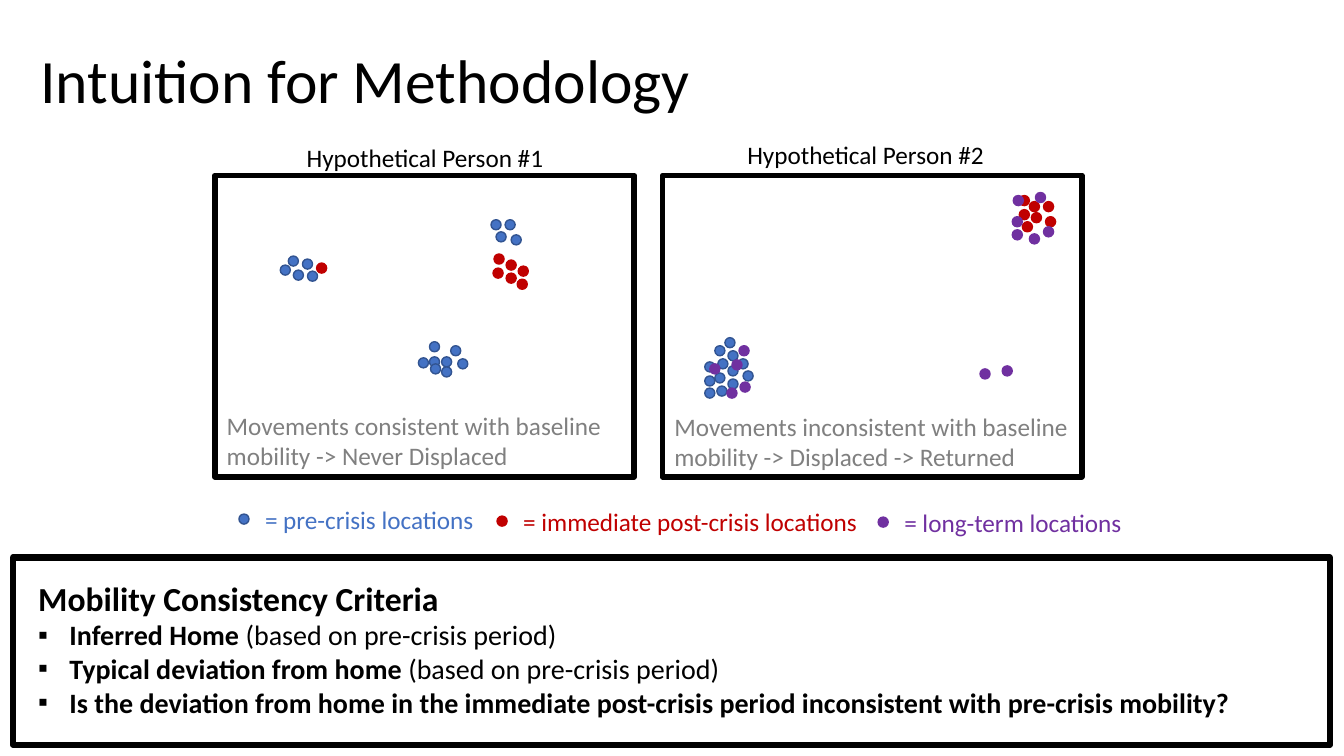
from dataclasses import dataclass

import pptx
import pptx.dml.color
import pptx.enum.shapes
import pptx.enum.text
import pptx.oxml
import pptx.oxml.ns
import pptx.util
from pptx.dml.color import RGBColor
from pptx.enum.shapes import MSO_SHAPE
from pptx.enum.text import MSO_ANCHOR, PP_ALIGN
from pptx.util import Inches

BLACK = RGBColor(0x00, 0x00, 0x00)
GRAY = RGBColor(0x80, 0x80, 0x80)
BLUE = RGBColor(0x44, 0x72, 0xC4)
DARK_BLUE = RGBColor(0x32, 0x54, 0x91)
RED = RGBColor(0xC0, 0x00, 0x00)
PURPLE = RGBColor(0x70, 0x30, 0xA0)

FONT = "Calibri"
DOT_SIZE = 0.1
BULLET_INDENT = 0.31


@dataclass(frozen=True)
class Period:
    fill: RGBColor
    outline: RGBColor


@dataclass(frozen=True)
class Span:
    text: str
    bold: bool = False


@dataclass(frozen=True)
class Label:
    text: str
    left: float
    top: float
    width: float
    height: float = 0.4
    size: float = 18
    color: RGBColor = BLACK
    align: PP_ALIGN = PP_ALIGN.LEFT
    anchor: MSO_ANCHOR = MSO_ANCHOR.TOP
    spacing: float = 1.0


@dataclass(frozen=True)
class Frame:
    left: float
    top: float
    width: float
    height: float
    weight: float


@dataclass(frozen=True)
class Cluster:
    period: Period
    spots: tuple[tuple[float, float], ...]


@dataclass(frozen=True)
class LegendEntry:
    period: Period
    text: str
    left: float
    top: float
    width: float


PRE_CRISIS = Period(BLUE, DARK_BLUE)
POST_CRISIS = Period(RED, RED)
LONG_TERM = Period(PURPLE, PURPLE)

FRAMES = (
    Frame(2.13, 1.74, 4.16, 2.99, 4),
    Frame(6.57, 1.74, 4.16, 2.99, 4),
    Frame(0.13, 5.53, 13.06, 1.86, 4.5),
)

LABELS = (
    Label("Intuition for Methodology", 0.3, 0.1, 11.5, 1.45, 44,
          anchor=MSO_ANCHOR.MIDDLE, spacing=0.9),
    Label("Hypothetical Person #1", 2.51, 1.36, 3.41, align=PP_ALIGN.CENTER),
    Label("Hypothetical Person #2", 6.88, 1.33, 3.41, align=PP_ALIGN.CENTER),
    Label("Movements consistent with baseline mobility -> Never Displaced",
          2.15, 4.02, 4.16, 0.71, color=GRAY),
    Label("Movements inconsistent with baseline mobility -> Displaced -> Returned",
          6.59, 4.03, 4.16, 0.71, color=GRAY),
)

LEGEND = (
    LegendEntry(PRE_CRISIS, "= pre-crisis locations", 2.37, 5.1, 2.91),
    LegendEntry(POST_CRISIS, "= immediate post-crisis locations", 4.93, 5.12, 3.78),
    LegendEntry(LONG_TERM, "= long-term locations", 8.71, 5.13, 3.78),
)

CLUSTERS = (
    Cluster(PRE_CRISIS, (
        (2.86, 2.54), (2.78, 2.63), (2.91, 2.68), (3.0, 2.57), (3.05, 2.69),
        (4.87, 2.18), (5.01, 2.18), (4.92, 2.3), (5.07, 2.33),
        (4.26, 3.39), (4.38, 3.54), (4.26, 3.54), (4.47, 3.43),
        (4.54, 3.56), (4.38, 3.64), (4.15, 3.55), (4.27, 3.61))),
    Cluster(POST_CRISIS, (
        (4.9, 2.52), (5.02, 2.58), (4.89, 2.66), (5.02, 2.71),
        (5.14, 2.64), (5.13, 2.77), (3.14, 2.61))),
    Cluster(PRE_CRISIS, (
        (7.22, 3.63), (7.32, 3.56), (7.37, 3.68), (7.22, 3.76), (7.22, 3.48),
        (7.12, 3.56), (7.09, 3.7), (7.11, 3.83), (7.09, 3.43), (6.99, 3.59),
        (6.99, 3.73), (6.99, 3.85), (7.19, 3.35))),
    Cluster(POST_CRISIS, (
        (10.11, 2.08), (10.21, 2.0), (10.23, 2.11), (10.35, 2.0),
        (10.14, 2.2), (10.37, 2.15), (10.11, 1.94))),
    Cluster(LONG_TERM, (
        (10.04, 2.15), (10.21, 2.32), (10.04, 2.28), (10.27, 1.91),
        (10.35, 2.25), (10.05, 1.94))),
    Cluster(LONG_TERM, ((9.94, 3.63), (9.72, 3.66))),
    Cluster(LONG_TERM, (
        (7.26, 3.57), (7.04, 3.61), (7.34, 3.79), (7.21, 3.85), (7.33, 3.43))),
)

CRITERIA_TITLE = Span("Mobility Consistency Criteria", True)
CRITERIA = (
    (Span("Inferred Home ", True), Span("(based on pre-crisis period)")),
    (Span("Typical deviation from home ", True), Span("(based on pre-crisis period)")),
    (Span("Is the deviation from home in the immediate post-crisis period "
          "inconsistent with pre-crisis mobility?", True),),
)


def apply_format(target: object, values: dict[str, object]) -> None:
    for name, value in values.items():
        setattr(target, name, value)


def add_span(para, span: Span, size: float, color: RGBColor) -> None:
    run = para.add_run()
    run.text = span.text
    apply_format(run.font, {"name": FONT, "size": pptx.util.Pt(size), "bold": span.bold})
    run.font.color.rgb = color


def add_box(shapes, left: float, top: float, width: float, height: float,
            anchor: MSO_ANCHOR = MSO_ANCHOR.TOP):
    box = shapes.add_textbox(Inches(left), Inches(top), Inches(width), Inches(height))
    apply_format(box.text_frame, {"word_wrap": True, "vertical_anchor": anchor})
    return box


def draw_label(shapes, label: Label) -> None:
    box = add_box(shapes, label.left, label.top, label.width, label.height, label.anchor)
    para = box.text_frame.paragraphs[0]
    apply_format(para, {"alignment": label.align, "line_spacing": label.spacing})
    add_span(para, Span(label.text), label.size, label.color)


def draw_frame(shapes, frame: Frame) -> None:
    shape = shapes.add_shape(MSO_SHAPE.RECTANGLE, Inches(frame.left), Inches(frame.top),
                             Inches(frame.width), Inches(frame.height))
    shape.shadow.inherit = False
    shape.fill.background()
    shape.line.color.rgb = BLACK
    shape.line.width = pptx.util.Pt(frame.weight)


def draw_dot(shapes, period: Period, left: float, top: float) -> None:
    dot = shapes.add_shape(MSO_SHAPE.OVAL, Inches(left), Inches(top),
                           Inches(DOT_SIZE), Inches(DOT_SIZE))
    dot.shadow.inherit = False
    dot.fill.solid()
    dot.fill.fore_color.rgb = period.fill
    dot.line.color.rgb = period.outline
    dot.line.width = pptx.util.Pt(1)


def draw_cluster(shapes, cluster: Cluster) -> None:
    group = shapes.add_group_shape()
    for left, top in cluster.spots:
        draw_dot(group.shapes, cluster.period, left, top)


def draw_legend_entry(shapes, entry: LegendEntry) -> None:
    draw_dot(shapes, entry.period, entry.left, entry.top)
    draw_label(shapes, Label(entry.text, entry.left + 0.16, entry.top - 0.15,
                             entry.width, color=entry.period.fill))


def add_bullet(para) -> None:
    properties = para._p.get_or_add_pPr()
    indent = Inches(BULLET_INDENT)
    properties.set("marL", str(indent))
    properties.set("indent", str(-indent))
    for tag, key, value in (("buFont", "typeface", "Arial"), ("buChar", "char", "▪")):
        element = pptx.oxml.parse_xml(
            f'<a:{tag} {pptx.oxml.ns.nsdecls("a")} {key}="{value}"/>')
        properties.append(element)


def draw_criteria(shapes) -> None:
    text = add_box(shapes, 0.28, 5.68, 12.78, 1.65).text_frame
    add_span(text.paragraphs[0], CRITERIA_TITLE, 24, BLACK)
    for spans in CRITERIA:
        para = text.add_paragraph()
        add_bullet(para)
        for span in spans:
            add_span(para, span, 20, BLACK)


def main() -> None:
    deck = pptx.Presentation()
    apply_format(deck, {"slide_width": Inches(13.33), "slide_height": Inches(7.5)})
    page = deck.slides.add_slide(deck.slide_layouts[6])
    for draw, items in ((draw_frame, FRAMES), (draw_legend_entry, LEGEND),
                        (draw_cluster, CLUSTERS), (draw_label, LABELS)):
        for item in items:
            draw(page.shapes, item)
    draw_criteria(page.shapes)
    deck.save("out.pptx")


if __name__ == "__main__":
    main()
